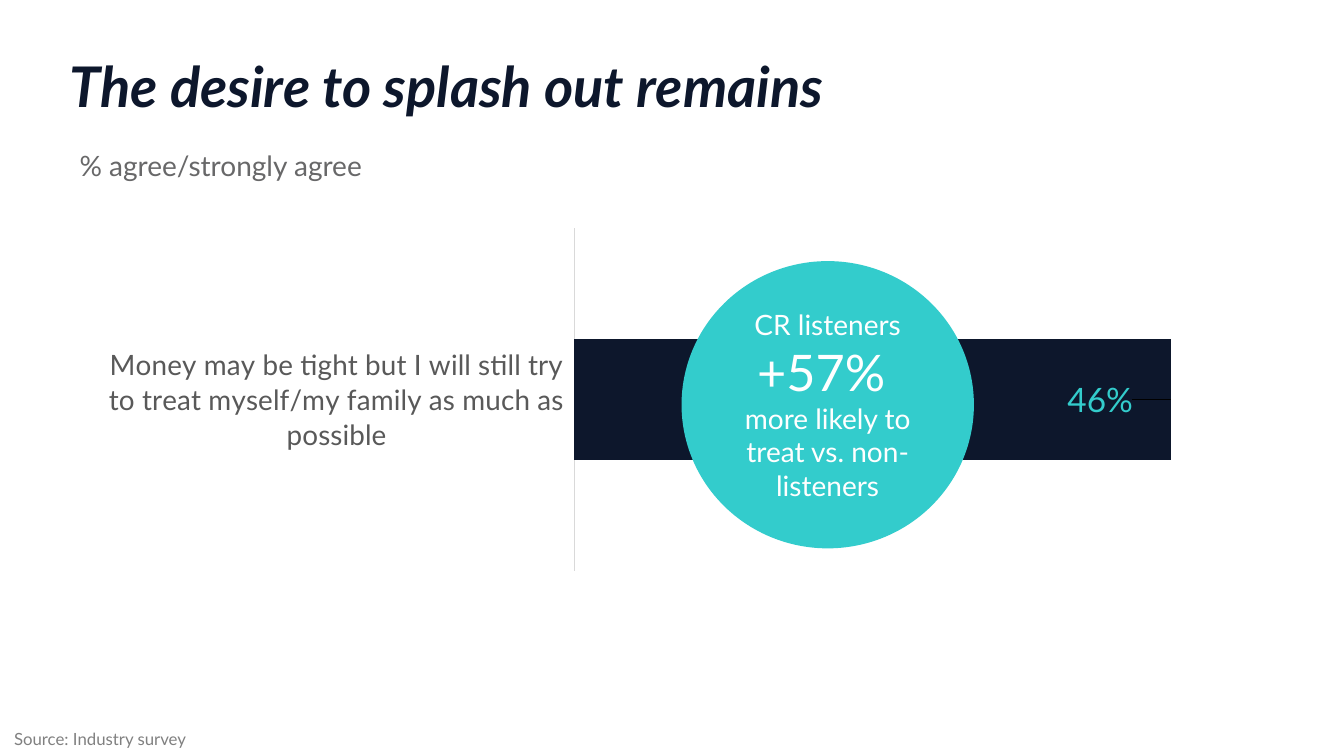
from lxml import etree
from pptx import Presentation
from pptx.chart.data import CategoryChartData
from pptx.dml.color import RGBColor
from pptx.enum.chart import XL_CHART_TYPE, XL_LABEL_POSITION, XL_TICK_LABEL_POSITION, XL_TICK_MARK
from pptx.enum.shapes import MSO_SHAPE
from pptx.enum.text import MSO_ANCHOR, PP_ALIGN
from pptx.oxml.ns import qn
from pptx.util import Inches, Pt

COLORS = {"navy": "0D172C", "teal": "33CCCC", "white": "FFFFFF", "subtitle": "686869",
          "category": "595959", "axis": "D9D9D9", "source": "808080"}
FONT = "Lato"


def color(name):
    return RGBColor.from_string(COLORS[name])


def style_font(font, size, color_name):
    font.name, font.size = FONT, Pt(size)
    font.color.rgb = color(color_name)


def add_run(paragraph, text, size, color_name):
    run = paragraph.add_run()
    run.text = text
    style_font(run.font, size, color_name)
    return run


def set_margins(frame, horizontal, vertical):
    frame.margin_left = frame.margin_right = Inches(horizontal)
    frame.margin_top = frame.margin_bottom = Inches(vertical)


def add_layout(parent, index, **values):
    """Insert a manual chart layout as a child of parent."""
    layout = etree.Element(qn("c:layout"))
    manual = etree.SubElement(layout, qn("c:manualLayout"))
    for tag, value in values.items():
        etree.SubElement(manual, qn(f"c:{tag}")).set("val", str(value))
    parent.insert(index, layout)


def place_title(slide, left, top, width, height):
    title = slide.shapes.title
    title.left, title.top, title.width, title.height = map(Inches, (left, top, width, height))
    frame = title.text_frame
    set_margins(frame, 0, 0)
    frame.vertical_anchor = MSO_ANCHOR.TOP
    heading = frame.paragraphs[0]
    heading.alignment = PP_ALIGN.LEFT
    heading.line_spacing = Pt(42.7)
    run = add_run(heading, "The desire to splash out remains", 40, "navy")
    run.font.bold = run.font.italic = True


def add_caption(slide, text, size, color_name, box, margins=(0.1, 0.05)):
    frame = slide.shapes.add_textbox(*map(Inches, box)).text_frame
    frame.word_wrap = True
    set_margins(frame, *margins)
    add_run(frame.paragraphs[0], text, size, color_name)


def add_agreement_chart(slide, left, top, width, height):
    data = CategoryChartData(number_format="0%")
    data.categories = ["Money may be tight but I will still try to treat "
                       "myself/my family as much as possible"]
    data.add_series("Series 1", [0.46])
    chart = slide.shapes.add_chart(XL_CHART_TYPE.BAR_CLUSTERED,
                                   *map(Inches, (left, top, width, height)), data).chart
    chart.has_legend = chart.has_title = False
    style_font(chart.font, 10, "category")

    # Axes
    statement_axis = chart.category_axis
    statement_axis.major_tick_mark = XL_TICK_MARK.NONE
    statement_axis.tick_label_position = XL_TICK_LABEL_POSITION.LOW
    style_font(statement_axis.tick_labels.font, 20, "category")
    statement_axis.format.line.color.rgb = color("axis")
    statement_axis.format.line.width = Pt(0.75)
    percent_axis = chart.value_axis
    percent_axis.minimum_scale, percent_axis.maximum_scale = 0, 0.5
    percent_axis.has_major_gridlines = False
    percent_axis.visible = False

    # Bar and its value
    plot = chart.plots[0]
    plot.gap_width = 182
    plot.vary_by_categories = False
    agreement = plot.series[0]
    agreement.format.fill.solid()
    agreement.format.fill.fore_color.rgb = color("navy")
    labels = agreement.data_labels
    labels.show_value = True
    labels.number_format, labels.number_format_is_linked = "0%", False
    style_font(labels.font, 24, "teal")
    value_label = agreement.points[0].data_label
    value_label.position = XL_LABEL_POSITION.INSIDE_END
    style_font(value_label.font, 24, "teal")

    # Shift the value inwards and fix the inner plot area
    add_layout(labels._element.find(qn("c:dLbl")), 1, x=-0.03, y=0)
    plot_area = chart._chartSpace.chart.plotArea
    for automatic in plot_area.findall(qn("c:layout")):
        plot_area.remove(automatic)
    add_layout(plot_area, 0, layoutTarget="inner", xMode="edge", yMode="edge",
               x=0.405, y=0.026, w=0.575, h=0.859)


def add_uplift_circle(slide, left, top, width, height):
    circle = slide.shapes.add_shape(MSO_SHAPE.OVAL, *map(Inches, (left, top, width, height)))
    circle.shadow.inherit = False
    circle.fill.solid()
    circle.fill.fore_color.rgb = color("teal")
    circle.line.fill.background()
    frame = circle.text_frame
    frame.word_wrap = True
    frame.vertical_anchor = MSO_ANCHOR.MIDDLE
    uplift, comparison = frame.paragraphs[0], frame.add_paragraph()
    uplift.alignment = comparison.alignment = PP_ALIGN.CENTER
    add_run(uplift, "CR listeners ", 20, "white")
    add_run(uplift, "+57% ", 36, "white")
    add_run(comparison, "more likely to treat vs. non-listeners", 20, "white")


def main():
    deck = Presentation()
    deck.slide_width, deck.slide_height = Inches(13.33), Inches(7.5)
    slide = deck.slides.add_slide(deck.slide_layouts[5])
    place_title(slide, 0.69, 0.58, 12.39, 0.7)
    add_caption(slide, "% agree/strongly agree", 20, "subtitle", (0.69, 1.42, 12.12, 0.88))
    add_agreement_chart(slide, 1.08, 2.16, 11.27, 3.96)
    add_uplift_circle(slide, 6.76, 2.59, 2.9, 2.85)
    add_caption(slide, "Source: Industry survey", 12, "source", (0.01, 7.16, 3.53, 0.34),
                margins=(0.13, 0.07))
    deck.save("out.pptx")


if __name__ == "__main__":
    main()
